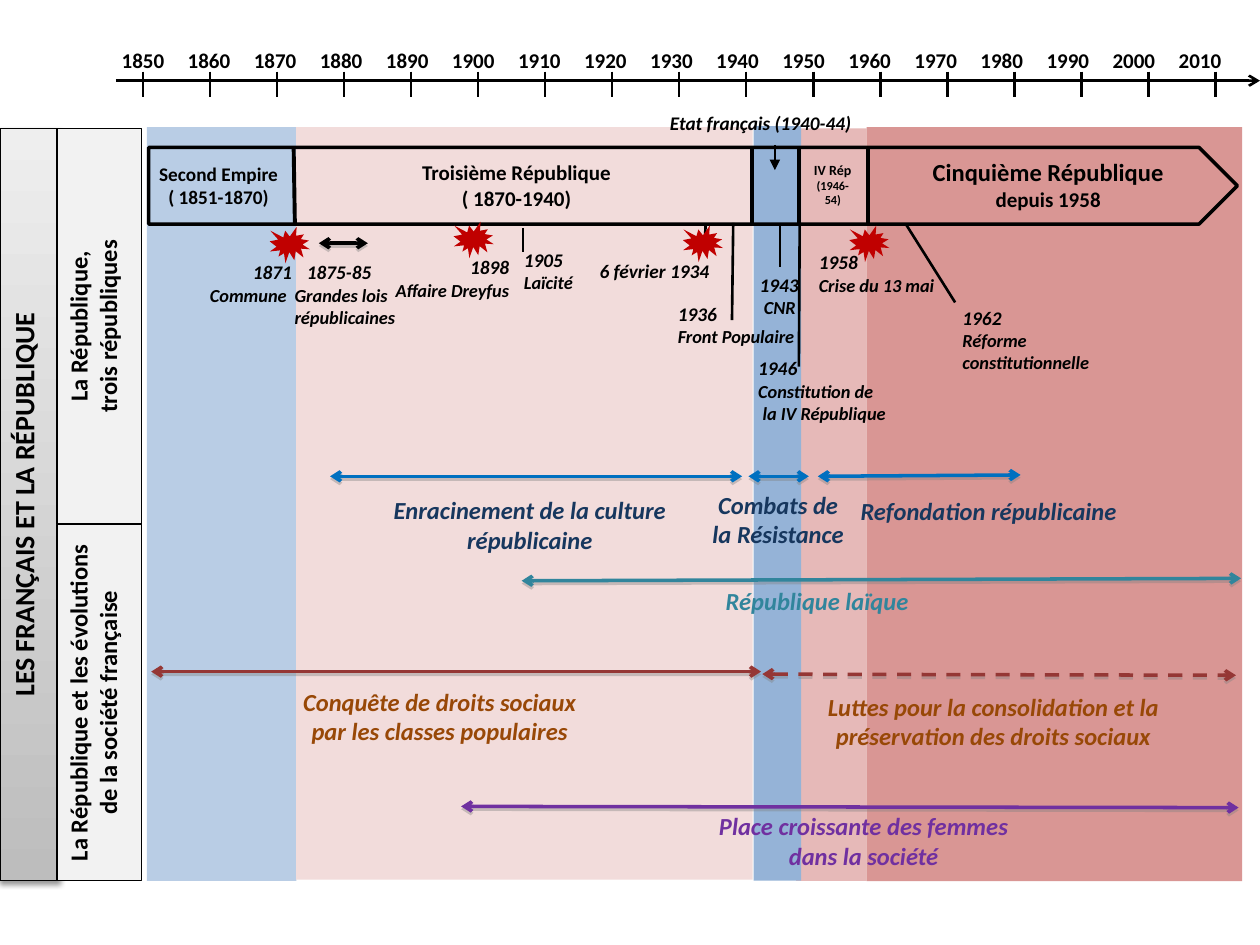
"""Build a timeline slide of the French and the Republic, 1850 to 2010."""
from typing import NamedTuple, Optional

import pptx
import pptx.dml.color
import pptx.enum.dml
import pptx.enum.shapes
import pptx.enum.text
import pptx.oxml
import pptx.oxml.ns
import pptx.util

Pt = pptx.util.Pt
RGBColor = pptx.dml.color.RGBColor
Shape = pptx.enum.shapes.MSO_SHAPE
Align = pptx.enum.text.PP_ALIGN

BLACK = RGBColor(0x00, 0x00, 0x00)
GREY = RGBColor(0x80, 0x80, 0x80)
TITLE_DARK = RGBColor(0xBD, 0xBD, 0xBD)
TITLE_LIGHT = RGBColor(0xEE, 0xEE, 0xEE)
SECTION = RGBColor(0xF2, 0xF2, 0xF2)
EMPIRE = RGBColor(0xB9, 0xCD, 0xE5)
THIRD = RGBColor(0xF2, 0xDC, 0xDB)
VICHY = RGBColor(0x95, 0xB3, 0xD7)
FOURTH = RGBColor(0xE6, 0xB9, 0xB8)
FIFTH = RGBColor(0xD9, 0x96, 0x94)
CRISIS = RGBColor(0xC0, 0x00, 0x00)
BLUE = RGBColor(0x00, 0x70, 0xC0)
NAVY = RGBColor(0x17, 0x37, 0x5E)
TEAL = RGBColor(0x31, 0x85, 0x9C)
RUST = RGBColor(0x95, 0x37, 0x35)
BROWN = RGBColor(0x98, 0x48, 0x07)
PURPLE = RGBColor(0x70, 0x30, 0xA0)


class Box(NamedTuple):
    left: float
    top: float
    width: float
    height: float


class Block(NamedTuple):
    box: Box
    color: RGBColor


class Stroke(NamedTuple):
    start: tuple[float, float]
    end: tuple[float, float]
    color: RGBColor = BLACK
    width: float = 1.5
    head: str = ""
    tail: str = ""
    shadow: bool = False
    dashed: bool = False


class Label(NamedTuple):
    words: str
    box: Box
    sizes: tuple[float, ...]
    align: Align = Align.LEFT
    color: RGBColor = BLACK
    italic: bool = True
    shadow: bool = False
    indents: tuple[float, ...] = (0,)


BANNER = Box(0, 73.4, 33.8, 429.8)
BANDS = [
    Block(Box(455, 73.4, 40.3, 430), FOURTH),
    Block(Box(84, 72.7, 85.5, 430.6), EMPIRE),
    Block(Box(169.3, 72.7, 260.8, 430), THIRD),
    Block(Box(430.6, 72, 27.2, 431.3), VICHY),
    Block(Box(495.2, 72.7, 214.6, 430.8), FIFTH),
]
SECTIONS = [
    ("La République,\ntrois républiques", Box(32.5, 73.4, 48.4, 226.1)),
    ("La République et les évolutions de la société française", Box(32.5, 299.9, 48.4, 203.4)),
]
EVENT_MARKS = [
    Stroke((298.8, 130.3), (298.8, 144)),
    Stroke((419, 127.4), (418.3, 182.9)),
    Stroke((403.2, 128.9), (402.5, 143.3)),
    Stroke((457, 127.4), (456.5, 209.5)),
    Stroke((445.7, 127.4), (445.7, 152.6)),
    Stroke((517.7, 128.2), (545.8, 172.8)),
    Stroke((442.8, 82.8), (442.8, 97.2), tail="triangle"),
]
PERIODS = [
    Stroke(start, end, color, 2, "arrow", "arrow", True, dashed)
    for start, end, color, dashed in [
        ((182.2, 139), (210.2, 139), BLACK, False),
        ((188.6, 272.2), (424.1, 272.2), BLUE, False),
        ((427.7, 272.2), (462.2, 272.2), BLUE, False),
        ((467.3, 272.2), (583.2, 271.4), BLUE, False),
        ((298.1, 331.9), (709.2, 330.5), TEAL, False),
        ((86.4, 383.8), (434.9, 383.8), RUST, False),
        ((263.5, 460.8), (707.8, 461.5), PURPLE, False),
        ((435.6, 385.2), (706.3, 385.9), RUST, True),
    ]
]
ERA_BORDERS = [
    Stroke((168.5, 127.4), (167.8, 83.5), width=2.25),
    Stroke((429.8, 128.2), (429.8, 84.2), width=2.25),
    Stroke((456.5, 128.2), (456.5, 83.5), width=2.25),
    Stroke((496.1, 83.5), (496.1, 128.2), width=2.25),
]
ERAS = [
    Label(words, box, sizes, Align.CENTER, italic=False, shadow=True)
    for words, box, sizes in [
        ("Second Empire\n( 1851-1870)", Box(83.5, 89.3, 82.8, 33.8), (11, 11)),
        ("Troisième République\n( 1870-1940)", Box(233.3, 87.8, 123.8, 36.7), (12, 12)),
        ("IV Rép\n(1946-54)", Box(457.9, 88.6, 36, 35.3), (8, 7)),
        ("Cinquième République\ndepuis 1958", Box(523.4, 86.4, 151.2, 38.9), (14, 12)),
    ]
]
EVENTS = [
    Label("1898\nAffaire Dreyfus", Box(187.2, 142.6, 110.9, 33.1), (11, 10.5), Align.RIGHT),
    Label("1875-85\nGrandes lois\nrépublicaines", Box(161.3, 145.4, 74.2, 46.1),
          (11, 10.5, 10.5), indents=(7, 0, 0)),
    Label("1871\nCommune", Box(99.4, 145.4, 75.6, 33.1), (11, 10.5), indents=(38, 13.5)),
    Label("1905\nLaïcité", Box(292.3, 138.2, 46.1, 33.1), (11, 10.5)),
    Label("6 février 1934", Box(335.5, 144.7, 87.1, 20.9), (11,)),
    Label("1936\nFront Populaire", Box(380.2, 169.2, 87.1, 33.1), (11, 10.5)),
    Label("1943\nCNR", Box(427, 152.6, 69.1, 33.1), (11, 10.5), indents=(0, 2.5)),
    Label("1946\nConstitution de\nla IV République", Box(426.2, 200.2, 87.1, 59),
          (11, 10.5, 10.5), indents=(0, 0, 2.5)),
    Label("1958\nCrise du 13 mai", Box(460.8, 139.7, 87.1, 33.1), (11, 10.5)),
    Label("1962\nRéforme constitutionnelle", Box(542.9, 171.4, 123.1, 46.1), (11, 10.5)),
    Label("Etat français (1940-44)", Box(375.8, 59.8, 122.4, 20.9), (11,)),
]
THEMES = [
    Label(words, box, (14,), Align.CENTER, color)
    for words, box, color in [
        ("Enracinement de la culture républicaine", Box(200.2, 279.4, 205.2, 41), NAVY),
        ("Combats de la Résistance", Box(398.2, 276.5, 92.9, 41), NAVY),
        ("Refondation républicaine", Box(475, 280.1, 180, 24.5), NAVY),
        ("République laïque", Box(396, 331.2, 142, 24.5), TEAL),
        ("Conquête de droits sociaux\npar les classes populaires", Box(92.2, 388.8, 318.2, 41), BROWN),
        ("Place croissante des femmes\ndans la société", Box(321.1, 460.1, 344.9, 41), PURPLE),
        ("Luttes pour la consolidation et la préservation des droits sociaux",
         Box(436.3, 391.7, 262.8, 41), BROWN),
    ]
]
CRISES = [(154.1, 129.6), (259.2, 126.7), (390.2, 128.9), (485.3, 128.9)]


def effects(color: Optional[RGBColor] = None, blur: float = 0, distance: float = 0):
    """Return an effect list, with an outer shadow when a colour is given."""
    shadow = "" if color is None else (
        f'<a:outerShdw blurRad="{Pt(blur)}" dist="{Pt(distance)}" dir="5400000" rotWithShape="0">'
        f'<a:srgbClr val="{color}"><a:alpha val="38000"/></a:srgbClr></a:outerShdw>')
    return pptx.oxml.parse_xml(
        f'<a:effectLst {pptx.oxml.ns.nsdecls("a")}>{shadow}</a:effectLst>')


def write(frame, words: str, *, sizes: tuple[float, ...], align: Align = Align.CENTER,
          color: RGBColor = BLACK, italic: bool = False, shadow: bool = False,
          vertical: bool = False, indents: tuple[float, ...] = (0,)) -> None:
    """Fill a text frame, one paragraph a line, with sizes and indents by line."""
    frame.word_wrap = True
    frame.auto_size = pptx.enum.text.MSO_AUTO_SIZE.NONE
    frame.vertical_anchor = pptx.enum.text.MSO_ANCHOR.TOP
    frame.margin_left = frame.margin_right = Pt(7.2)
    frame.margin_top = frame.margin_bottom = Pt(3.6)
    if vertical:
        frame._txBody.bodyPr.set("vert", "vert270")
    for index, line in enumerate(words.split("\n")):
        paragraph = frame.add_paragraph() if index else frame.paragraphs[0]
        paragraph.alignment = align
        indent = indents[min(index, len(indents) - 1)]
        if indent:
            paragraph._p.get_or_add_pPr().set("marL", str(Pt(indent)))
        run = paragraph.add_run()
        run.text = line
        run.font.size = Pt(sizes[min(index, len(sizes) - 1)])
        run.font.bold, run.font.italic = True, italic
        run.font.color.rgb = color
        if shadow:
            run._r.get_or_add_rPr().append(effects(BLACK, 3, 3))
        run.font.name = "Calibri"


def draw_label(slide, label: Label) -> None:
    """Place a text box."""
    frame = slide.shapes.add_textbox(*map(Pt, label.box)).text_frame
    write(frame, label.words, sizes=label.sizes, align=label.align, color=label.color,
          italic=label.italic, shadow=label.shadow, indents=label.indents)


def draw_shape(slide, kind: Shape, box: Box, fill: Optional[RGBColor] = None, border: float = 0):
    """Place a preset shape with an optional fill and black border."""
    shape = slide.shapes.add_shape(kind, *map(Pt, box))
    shape.shadow.inherit = False
    if fill is None:
        shape.fill.background()
    else:
        shape.fill.solid()
        shape.fill.fore_color.rgb = fill
    if border:
        shape.line.color.rgb, shape.line.width = BLACK, Pt(border)
    else:
        shape.line.fill.background()
    return shape


def draw_stroke(slide, stroke: Stroke) -> None:
    """Place a straight line with optional arrowheads, dashes and shadow."""
    connector = slide.shapes.add_connector(
        pptx.enum.shapes.MSO_CONNECTOR.STRAIGHT, *map(Pt, stroke.start + stroke.end))
    connector.line.color.rgb, connector.line.width = stroke.color, Pt(stroke.width)
    if stroke.dashed:
        connector.line.dash_style = pptx.enum.dml.MSO_LINE.DASH
    for tag, style in (("headEnd", stroke.head), ("tailEnd", stroke.tail)):
        if style:
            connector.line._get_or_add_ln().append(pptx.oxml.parse_xml(
                f'<a:{tag} {pptx.oxml.ns.nsdecls("a")} type="{style}"/>'))
    connector._element.spPr.append(effects(GREY, 0, 1.6) if stroke.shadow else effects())


def draw_title(slide) -> None:
    """Turn the title placeholder a quarter left into the banner."""
    title = slide.shapes.title
    shift = (BANNER.height - BANNER.width) / 2
    title.left, title.top = Pt(BANNER.left - shift), Pt(BANNER.top + shift)
    title.width, title.height = Pt(BANNER.height), Pt(BANNER.width)
    title.rotation = 270
    title.fill.gradient()
    title.fill.gradient_angle = 0
    for stop, color in zip(title.fill.gradient_stops, (TITLE_DARK, TITLE_LIGHT)):
        stop.color.rgb = color
    title.line.color.rgb, title.line.width = BLACK, Pt(0.75)
    title._element.spPr.append(effects(BLACK, 3.1, 1.6))
    write(title.text_frame, "LES FRANÇAIS ET LA RÉPUBLIQUE", sizes=(16,))


def draw_axis(slide) -> None:
    """Draw the time axis with a tick and a label for each decade."""
    draw_stroke(slide, Stroke((66.2, 46.1), (720, 46.1), tail="arrow"))
    for index, year in enumerate(range(1850, 2011, 10)):
        tick = 81.7 + 38.3 * index
        draw_stroke(slide, Stroke((tick, 41), (tick, 55.4)))
        draw_label(slide, Label(str(year), Box(56.7 + 37.75 * index, 23.8, 50, 21.6), (12,),
                                Align.CENTER, italic=False))


def main() -> None:
    """Compose and save the slide."""
    deck = pptx.Presentation()
    deck.slide_width, deck.slide_height = Pt(720), Pt(540)
    slide = deck.slides.add_slide(deck.slide_layouts[5])
    draw_title(slide)
    for band in BANDS:
        draw_shape(slide, Shape.RECTANGLE, band.box, band.color)
    draw_axis(slide)
    for words, box in SECTIONS:
        section = draw_shape(slide, Shape.RECTANGLE, box, SECTION, 0.75)
        write(section.text_frame, words, sizes=(14,), vertical=True)
    for stroke in EVENT_MARKS + PERIODS:
        draw_stroke(slide, stroke)
    for label in ERAS + EVENTS + THEMES:
        draw_label(slide, label)
    draw_shape(slide, Shape.PENTAGON, Box(85, 84.2, 622.1, 43.9), border=2)
    for left, top in CRISES:
        draw_shape(slide, Shape.EXPLOSION1, Box(left, top, 23, 20.9), CRISIS)
    for border in ERA_BORDERS:
        draw_stroke(slide, border)
    deck.save("out.pptx")


if __name__ == "__main__":
    main()
